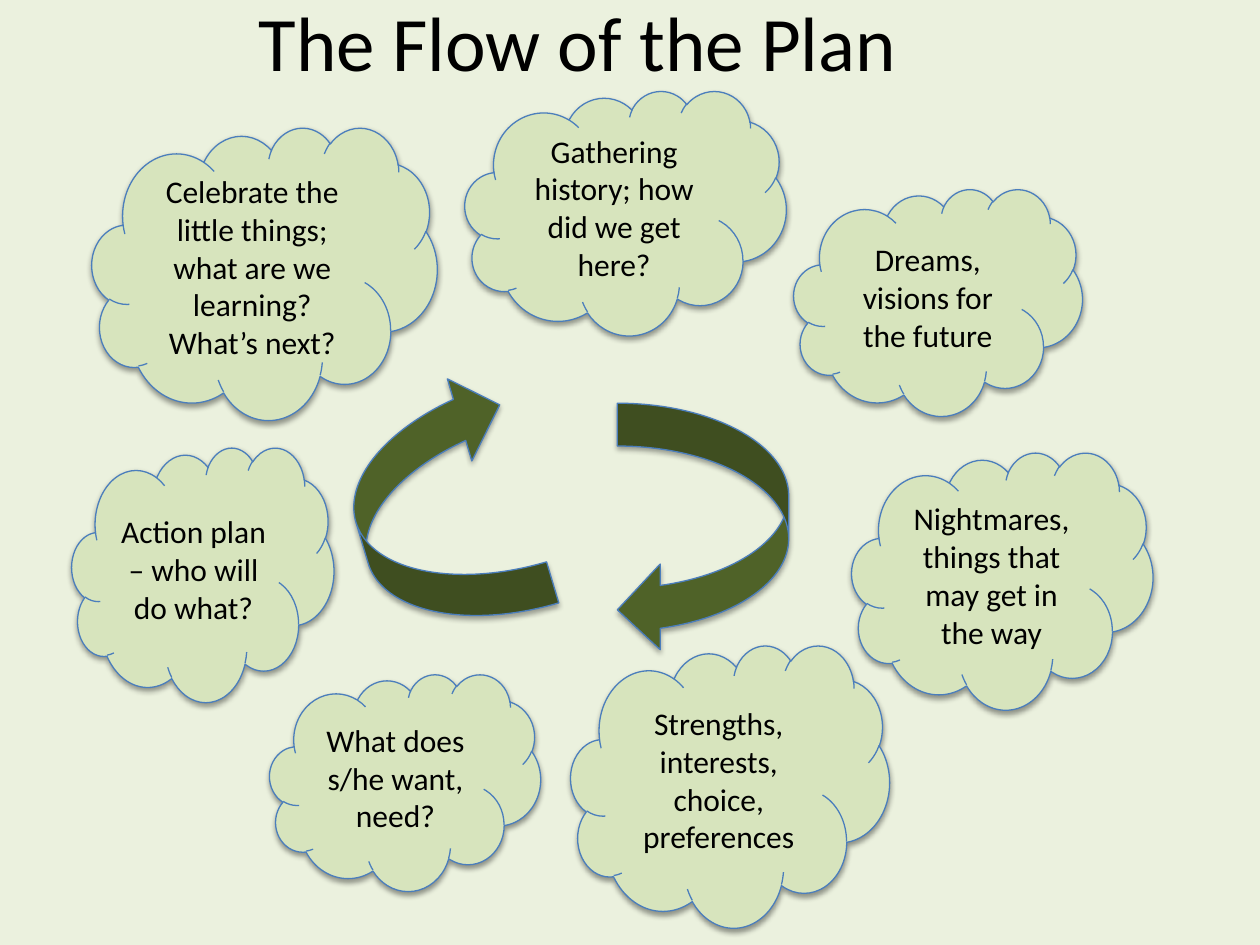
"""Build the slide that shows the flow of a plan as clouds around two arrows."""
from dataclasses import dataclass

from lxml import etree
from pptx import Presentation
from pptx import util as u
from pptx.dml.color import RGBColor
from pptx.enum import shapes, text
from pptx.oxml import ns

COLS, ROWS = 100, 75
WIDE, HIGH = u.Inches(10), u.Inches(7.5)


@dataclass(frozen=True)
class Theme:
    font: str = "Calibri"
    back: str = "EBF1DE"
    cloud: str = "D7E4BD"
    arrow: str = "4F6228"
    edge: str = "4B7EBC"
    ink: str = "000000"
    head: int = 44
    body: int = 18
    line: float = 0.75


@dataclass(frozen=True)
class Box:
    col: float
    row: float
    cols: float
    rows: float

    def place(self) -> tuple[int, int, int, int]:
        return (round(WIDE * self.col / COLS), round(HIGH * self.row / ROWS),
                round(WIDE * self.cols / COLS), round(HIGH * self.rows / ROWS))


@dataclass(frozen=True)
class Cloud:
    box: Box
    lines: tuple[str, ...]


@dataclass(frozen=True)
class Arrow:
    box: Box
    turn: float


THEME = Theme()
TITLE = Box(5, -3, 81.7, 12.5)
CLOUDS = (
    Cloud(Box(7.3, 10.1, 27.4, 23.2),
          ("Celebrate the little things; what are we learning? What’s next?",)),
    Cloud(Box(5.7, 35.5, 20.8, 20.2), ("Action plan – who will do what?",)),
    Cloud(Box(21.4, 53.5, 21.5, 17.2), ("What does s/he want, need?",)),
    Cloud(Box(45.3, 51.2, 25.3, 22.4), ("Strengths, interests, choice, preferences",)),
    Cloud(Box(67.6, 35.9, 23.9, 20.4), ("Nightmares,", "things that may get in the way")),
    Cloud(Box(63, 15, 22.9, 18), ("Dreams, visions for the future",)),
    Cloud(Box(36.9, 7.2, 25.5, 19.4), ("Gathering history; how did we get here?",)),
)
ARROWS = (
    Arrow(Box(49, 32, 13.6, 19.8), 0),
    Arrow(Box(28.2, 30.4, 13.6, 19.8), 163.4),
)


def tint(fill, color: str) -> None:
    fill.solid()
    fill.fore_color.rgb = RGBColor.from_string(color)


def write(frame, lines: tuple[str, ...], size: int) -> None:
    frame.word_wrap = True
    frame.vertical_anchor = text.MSO_ANCHOR.MIDDLE
    for i, line in enumerate(lines):
        para = frame.add_paragraph() if i else frame.paragraphs[0]
        para.alignment = text.PP_ALIGN.CENTER
        run = para.add_run()
        run.text = line
        run.font.name = THEME.font
        run.font.size = u.Pt(size)
        run.font.color.rgb = RGBColor.from_string(THEME.ink)


def shade(shape, dist: float, alpha: int) -> None:
    shape.shadow.inherit = False
    glow = shape._element.spPr.find(ns.qn("a:effectLst"))
    drop = etree.SubElement(glow, ns.qn("a:outerShdw"), blurRad=str(u.Pt(3.1)),
                            dist=str(u.Pt(dist)), dir="5400000", rotWithShape="0")
    color = etree.SubElement(drop, ns.qn("a:srgbClr"), val="000000")
    etree.SubElement(color, ns.qn("a:alpha"), val=str(alpha * 1000))


def draw(slide, kind, box: Box, color: str, dist: float, alpha: int):
    shape = slide.shapes.add_shape(kind, *box.place())
    tint(shape.fill, color)
    tint(shape.line.fill, THEME.edge)
    shape.line.width = u.Pt(THEME.line)
    shade(shape, dist, alpha)
    return shape


def add_cloud(slide, cloud: Cloud) -> None:
    shape = draw(slide, shapes.MSO_SHAPE.CLOUD, cloud.box, THEME.cloud, 1.6, 38)
    write(shape.text_frame, cloud.lines, THEME.body)


def add_arrow(slide, arrow: Arrow) -> None:
    shape = draw(slide, shapes.MSO_SHAPE.CURVED_LEFT_ARROW, arrow.box, THEME.arrow, 1.8, 35)
    shape.rotation = arrow.turn


def main() -> None:
    deck = Presentation()
    deck.slide_width, deck.slide_height = WIDE, HIGH
    slide = deck.slides.add_slide(deck.slide_layouts[5])
    tint(slide.background.fill, THEME.back)
    title = slide.shapes.title
    title.left, title.top, title.width, title.height = TITLE.place()
    write(title.text_frame, ("The Flow of the Plan",), THEME.head)
    for cloud in CLOUDS:
        add_cloud(slide, cloud)
    for arrow in ARROWS:
        add_arrow(slide, arrow)
    deck.save("out.pptx")


if __name__ == "__main__":
    main()
